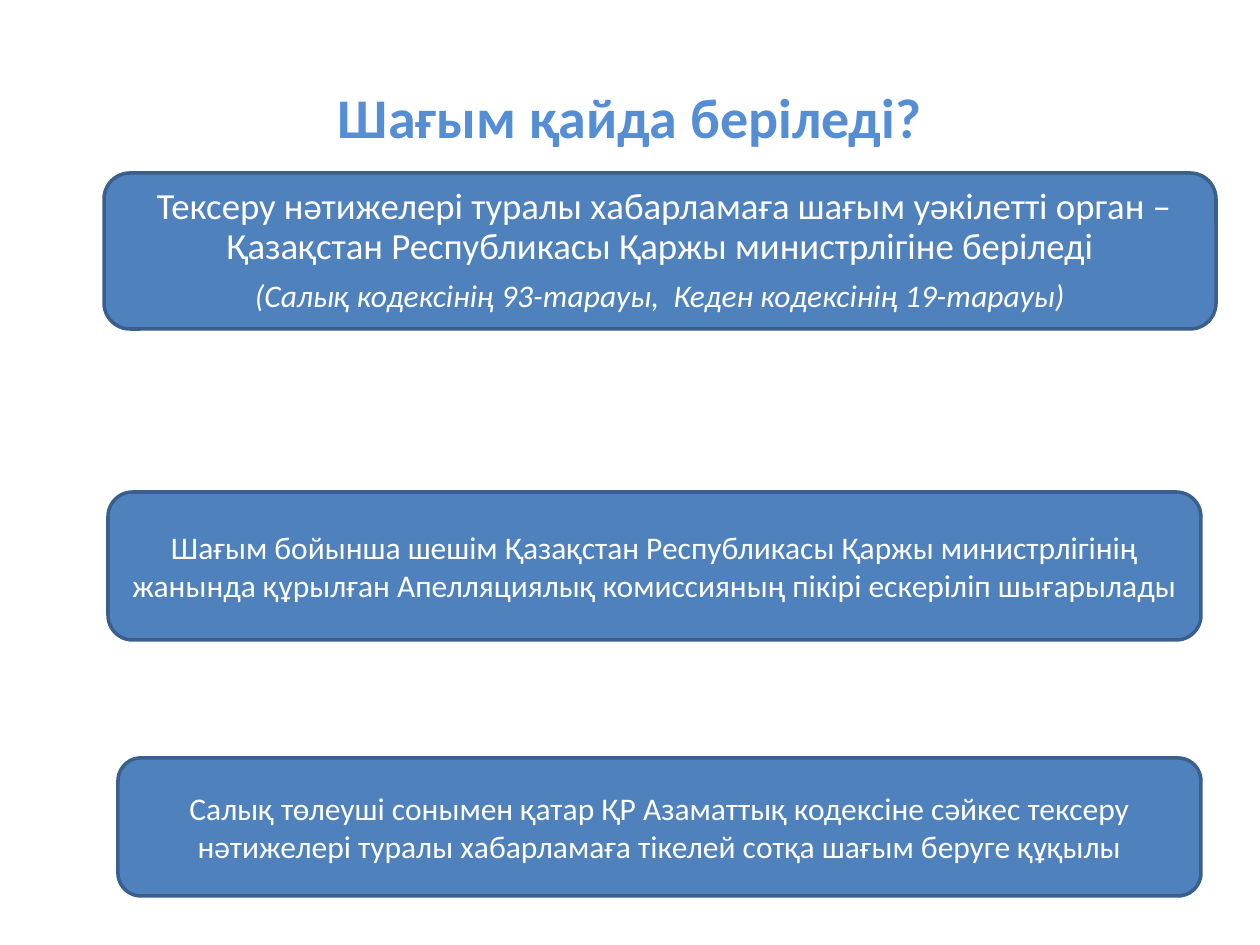
"""Builds a slide on where a tax complaint is filed."""
from dataclasses import dataclass
from pptx import Presentation, util as u
from pptx.dml.color import RGBColor
from pptx.enum import shapes, text


@dataclass(frozen=True)
class Theme:
    font: str = "Calibri"
    title: str = "558ED5"
    fill: str = "4F81BD"
    line: str = "3A5F8C"
    ink: str = "FFFFFF"
    head: int = 32
    lead: int = 21
    body: int = 18


T = Theme()


def px(n):
    return u.Emu(round(n * 914400 / 126))


def rgb(code):
    return RGBColor.from_string(code)


def place(shape, box):
    shape.left, shape.top, shape.width, shape.height = map(px, box)


def style(para, size, color, bold=False, italic=False):
    para.alignment = text.PP_ALIGN.CENTER
    font = para.font
    font.name, font.size = T.font, u.Pt(size)
    font.bold, font.italic = bold, italic
    font.color.rgb = rgb(color)


def add_title(slide, box, words):
    title = slide.shapes.title
    place(title, box)
    frame = title.text_frame
    frame.text = words
    frame.vertical_anchor = text.MSO_ANCHOR.MIDDLE
    style(frame.paragraphs[0], T.head, T.title, bold=True)


def add_panel(slide, box, words, size=T.body):
    kind = shapes.MSO_SHAPE.ROUNDED_RECTANGLE
    panel = slide.shapes.add_shape(kind, *map(px, box))
    panel.shadow.inherit = False
    panel.fill.solid()
    panel.fill.fore_color.rgb = rgb(T.fill)
    panel.line.color.rgb = rgb(T.line)
    panel.line.width = u.Pt(2)
    frame = panel.text_frame
    frame.word_wrap = True
    frame.vertical_anchor = text.MSO_ANCHOR.MIDDLE
    frame.text = words
    style(frame.paragraphs[0], size, T.ink)
    return frame


def add_note(frame, words):
    note = frame.add_paragraph()
    note.text = words
    style(note, T.body, T.ink, italic=True)
    for para in frame.paragraphs:
        para.line_spacing = 0.9
        para.space_after = u.Pt(7)


def main():
    deck = Presentation()
    deck.slide_width, deck.slide_height = px(1260), px(945)
    slide = deck.slides.add_slide(deck.slide_layouts[5])
    lead = add_panel(
        slide, (104, 173, 1112, 156),
        " Тексеру нәтижелері туралы хабарламаға шағым уәкілетті орган – "
        "Қазақстан Республикасы Қаржы министрлігіне беріледі", T.lead)
    add_note(lead, "(Салық кодексінің 93-тарауы,  Кеден кодексінің 19-тарауы)")
    add_title(slide, (63, 38, 1134, 157), "Шағым қайда беріледі?")
    add_panel(
        slide, (108, 492, 1093, 148),
        "Шағым бойынша шешім Қазақстан Республикасы Қаржы министрлігінің "
        "жанында құрылған Апелляциялық комиссияның пікірі ескеріліп шығарылады")
    add_panel(
        slide, (118, 758, 1083, 138),
        "Салық төлеуші сонымен қатар ҚР Азаматтық кодексіне сәйкес тексеру "
        "нәтижелері туралы хабарламаға тікелей сотқа шағым беруге құқылы")
    deck.save("out.pptx")


if __name__ == "__main__":
    main()
